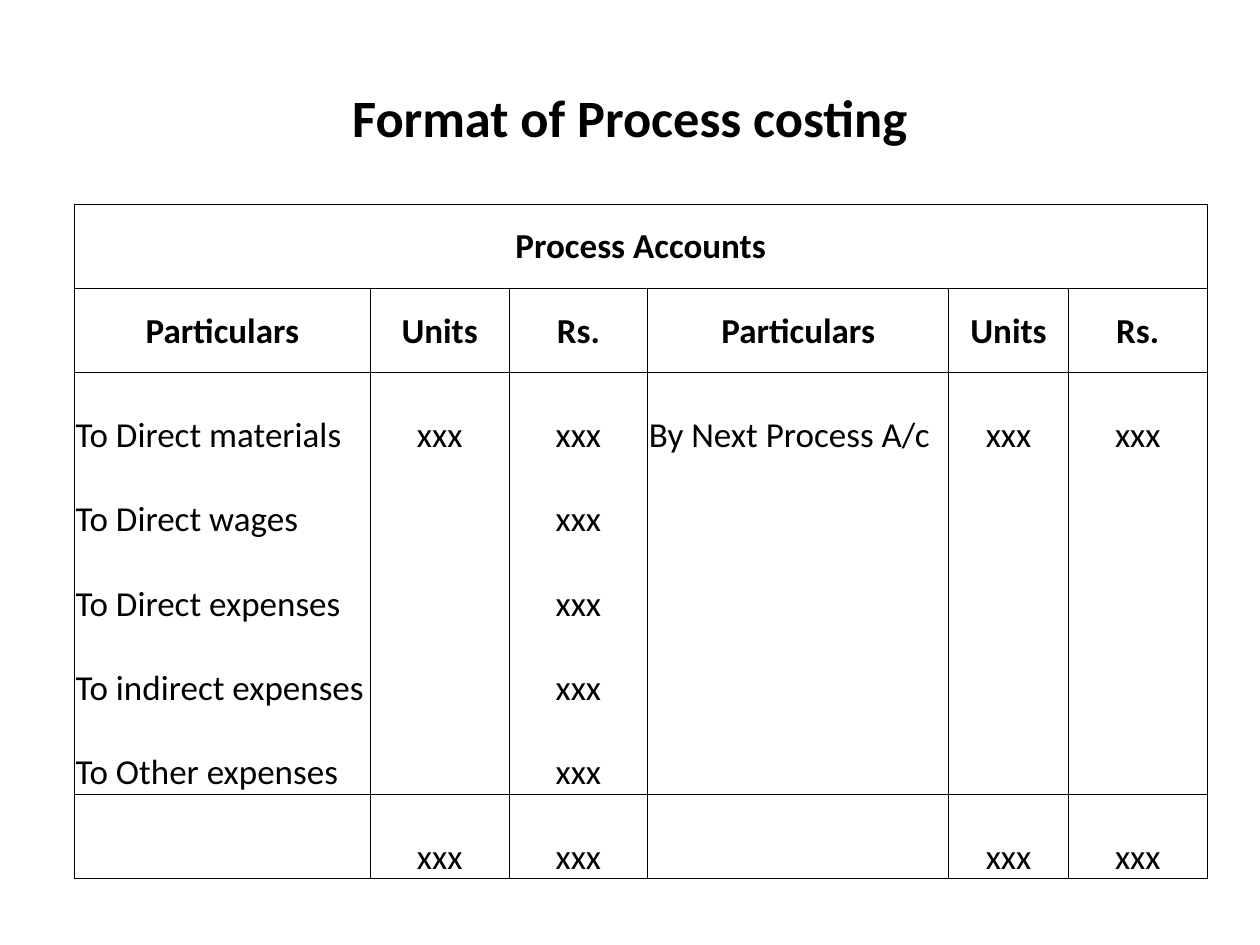
from dataclasses import dataclass

from lxml.etree import SubElement
from pptx import Presentation
from pptx.dml.color import RGBColor
from pptx.enum.text import MSO_ANCHOR as Anchor, PP_ALIGN as Align
from pptx.oxml.ns import qn
from pptx.util import Inches, Pt


@dataclass(frozen=True)
class Theme:
    font: str = "Calibri"
    ink: str = "000000"
    paper: str = "FFFFFF"
    title: int = 30
    body: int = 20
    rule: float = 0.5


class Deck:
    def __init__(self, theme, width, height):
        self.theme = theme
        self.prs = Presentation()
        self.prs.slide_width, self.prs.slide_height = Inches(width), Inches(height)
        self.s = self.prs.slides.add_slide(self.prs.slide_layouts[6])
        fill = self.s.background.fill
        fill.solid()
        fill.fore_color.rgb = RGBColor.from_string(theme.paper)

    def place(self, x, y, w, h):
        width, height = self.prs.slide_width, self.prs.slide_height
        return int(x * width), int(y * height), int(w * width), int(h * height)

    def set_text(self, tf, text, size, bold, align):
        tf.text = text
        p = tf.paragraphs[0]
        p.alignment = align
        for r in p.runs:
            r.font.name = self.theme.font
            r.font.size = Pt(size)
            r.font.bold = bold
            r.font.color.rgb = RGBColor.from_string(self.theme.ink)

    def title(self, text, box):
        tf = self.s.shapes.add_textbox(*self.place(*box)).text_frame
        tf.word_wrap = True
        tf.vertical_anchor = Anchor.MIDDLE
        self.set_text(tf, text, self.theme.title, True, Align.CENTER)

    def borders(self, cell, **sides):
        tc_pr = cell._tc.get_or_add_tcPr()
        for i, (side, shown) in enumerate(sides.items()):
            ln = SubElement(tc_pr, qn(f"a:ln{side}"), w=str(Pt(self.theme.rule)))
            if shown:
                fill = SubElement(ln, qn("a:solidFill"))
                SubElement(fill, qn("a:srgbClr"), val=self.theme.ink)
            else:
                SubElement(ln, qn("a:noFill"))
            tc_pr.insert(i, ln)

    def cell(self, cell, text, bold, align):
        cell.fill.background()
        cell.margin_left = cell.margin_right = cell.margin_top = Inches(0.01)
        cell.margin_bottom = 0
        cell.vertical_anchor = Anchor.MIDDLE if bold else Anchor.BOTTOM
        self.set_text(cell.text_frame, text, self.theme.body, bold, align)

    def ledger(self, rows, widths, box, headings, label_columns):
        frame = self.s.shapes.add_table(len(rows), len(widths), *self.place(*box))
        table = frame.table
        table.first_row = table.horz_banding = False
        for column, width in zip(table.columns, widths):
            column.width = Inches(width)
        last = len(rows) - 1
        for i, row in enumerate(rows):
            heading = i < headings
            for j, text in enumerate(row):
                left = j in label_columns and not heading
                cell = table.cell(i, j)
                self.cell(cell, text, heading, Align.LEFT if left else Align.CENTER)
                self.borders(cell, L=True, R=True,
                             T=i <= headings or i == last,
                             B=i < headings or i >= last - 1)
        table.cell(0, 0).merge(table.cell(0, len(widths) - 1))


def main():
    amount = "xxx"
    costs = ["wages", "expenses"]
    labels = [f"To Direct {cost}" for cost in costs]
    labels += ["To indirect expenses", "To Other expenses"]
    rows = [
        ["Process Accounts"] + [""] * 5,
        ["Particulars", "Units", "Rs."] * 2,
        ["To Direct materials", amount, amount, "By Next Process A/c", amount, amount],
        *[[label, "", amount, "", "", ""] for label in labels],
        ["", amount, amount] * 2,
    ]
    deck = Deck(Theme(), 10, 7.5)
    deck.title("Format of Process costing", (0.05, 0.04, 0.9, 1 / 6))
    deck.ledger(rows, [2.35, 1.1, 1.1, 2.39, 0.95, 1.1],
                (0.059, 0.216, 0.898, 0.714), headings=2, label_columns=(0, 3))
    deck.prs.save("out.pptx")


if __name__ == "__main__":
    main()
